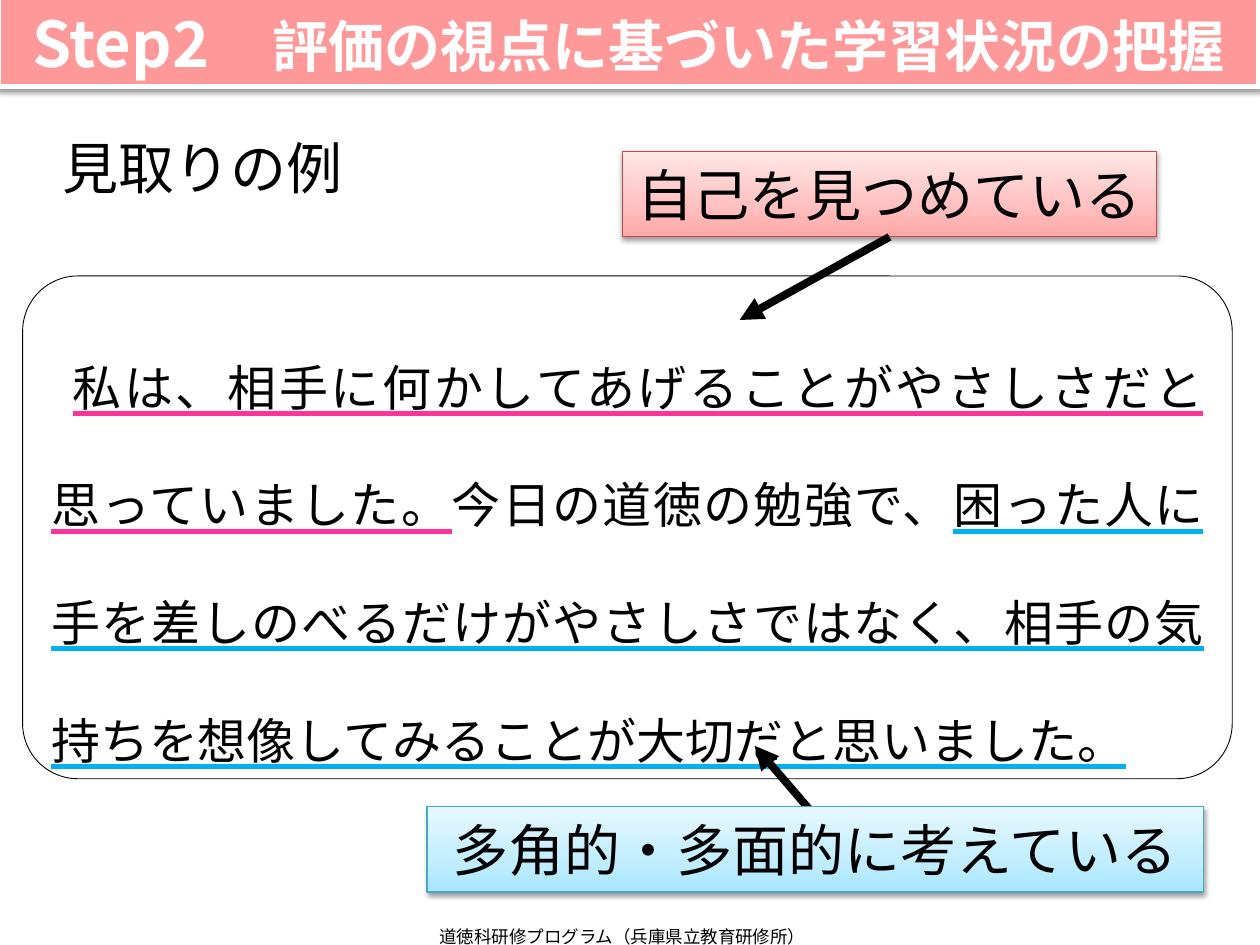
from copy import deepcopy

from pptx import Presentation
from pptx.dml.color import RGBColor
from pptx.enum.shapes import MSO_CONNECTOR, MSO_SHAPE as SHAPE
from pptx.enum.text import (MSO_ANCHOR as ANCHOR, MSO_AUTO_SIZE as AUTO,
                            MSO_TEXT_UNDERLINE_TYPE as UNDERLINE, PP_ALIGN as ALIGN)
from pptx.oxml import parse_xml
from pptx.oxml.ns import nsdecls, qn
from pptx.util import Inches, Pt

FONT = "Noto Sans CJK JP"
BLACK, WHITE = "000000", "FFFFFF"
PINK, BLUE = "FF3399", "00B0F0"


def rgb(value):
    return RGBColor.from_string(value)


def element(tag, body="", attributes=""):
    return parse_xml(f'<a:{tag} {nsdecls("a")} {attributes}>{body}</a:{tag}>')


class Slide:
    """Holds the style and the current slide; lengths are in inches."""

    def __init__(self, deck):
        self.slide = deck.slides.add_slide(deck.slide_layouts[5])
        self.shapes = self.slide.shapes

    def style_run(self, run, size, color=BLACK, bold=False, underline=None):
        font = run.font
        font.size, font.bold, font.name = Pt(size), bold, FONT
        font.color.rgb = rgb(color)
        latin = font._element.find(qn("a:latin"))
        latin.addnext(element("ea", attributes=f'typeface="{FONT}"'))
        if underline:
            font.underline = UNDERLINE.HEAVY_LINE
            latin.addprevious(element(
                "uFill", f'<a:solidFill><a:srgbClr val="{underline}"/></a:solidFill>'))

    def set_text(self, shape, runs, align=ALIGN.CENTER, anchor=ANCHOR.MIDDLE):
        """Fill a shape with one paragraph of (text, style) runs and return it."""
        frame = shape.text_frame
        frame.word_wrap, frame.auto_size = True, AUTO.NONE
        frame.vertical_anchor = anchor
        paragraph = frame.paragraphs[0]
        paragraph.alignment = align
        for text, style in runs:
            run = paragraph.add_run()
            run.text = text
            self.style_run(run, **style)
        return paragraph

    def outline(self, shape, color, width):
        shape.line.color.rgb = rgb(color)
        shape.line.width = Pt(width)
        shape.shadow.inherit = False

    def drop_shadow(self, shape):
        effects = shape._element.spPr.find(qn("a:effectLst"))
        effects.append(element(
            "outerShdw",
            '<a:srgbClr val="000000"><a:alpha val="38000"/></a:srgbClr>',
            f'blurRad="{Pt(3.1)}" dist="{Pt(1.6)}" dir="5400000" rotWithShape="0"'))

    def banner(self, box, runs, fill):
        title = self.shapes.title
        title.left, title.top, title.width, title.height = map(Inches, box)
        title.fill.solid()
        title.fill.fore_color.rgb = rgb(fill)
        self.outline(title, WHITE, 3)
        self.drop_shadow(title)
        self.set_text(title, runs)

    def label(self, box, text, size, align=ALIGN.CENTER, anchor=ANCHOR.MIDDLE):
        shape = self.shapes.add_textbox(*map(Inches, box))
        self.set_text(shape, [(text, dict(size=size))], align, anchor)

    def callout(self, box, text, colors, border):
        """Add a shadowed box whose gradient runs from bottom to top."""
        shape = self.shapes.add_shape(SHAPE.RECTANGLE, *map(Inches, box))
        shape.fill.gradient()
        shape.fill.gradient_angle = 90
        first = shape.fill.gradient_stops[0]._gs
        first.addnext(deepcopy(first))
        for stop, position, color in zip(shape.fill.gradient_stops, (0, 0.35, 1), colors):
            stop.position = position
            stop.color.rgb = rgb(color)
        self.outline(shape, border, 0.75)
        self.drop_shadow(shape)
        self.set_text(shape, [(text, dict(size=32))])

    def essay(self, box, runs):
        shape = self.shapes.add_shape(SHAPE.ROUNDED_RECTANGLE, *map(Inches, box))
        shape.adjustments[0] = 0.11
        shape.fill.solid()
        shape.fill.fore_color.rgb = rgb(WHITE)
        self.outline(shape, BLACK, 0.5)
        paragraph = self.set_text(shape, runs, ALIGN.JUSTIFY, ANCHOR.TOP)
        paragraph.line_spacing = 2.0
        paragraph._p.get_or_add_pPr().set("indent", str(Inches(0.17)))

    def arrow(self, start, end):
        line = self.shapes.add_connector(
            MSO_CONNECTOR.STRAIGHT, *map(Inches, (*start, *end)))
        line.line.color.rgb = rgb(BLACK)
        line.line.width = Pt(4.5)
        line.line._get_or_add_ln().append(element("tailEnd", attributes='type="triangle"'))
        line._element.spPr.append(element("effectLst"))


def main():
    deck = Presentation()
    deck.slide_width, deck.slide_height = Inches(10), Inches(7.5)
    slide = Slide(deck)

    heading = dict(color=WHITE, bold=True)
    slide.banner((-0.01, -0.02, 10, 0.71),
                 [("Step2　", dict(size=36, **heading)),
                  ("評価の視点に基づいた学習状況の把握", dict(size=32, **heading))],
                 "FF9999")
    slide.label((-0.37, 0.92, 3.96, 0.81), "見取りの例", 32)
    slide.callout((4.94, 1.2, 4.24, 0.68), "自己を見つめている",
                  ("FFA6A5", "FFC0BF", "FFE7E7"), "BF4C48")
    slide.essay((0.18, 2.19, 9.6, 3.99), [
        ("私は、相手に何かしてあげることがやさしさだと思っていました。",
         dict(size=28, underline=PINK)),
        ("今日の道徳の勉強で、", dict(size=28)),
        ("困った人に手を差しのべるだけがやさしさではなく、"
         "相手の気持ちを想像してみることが大切だと思いました。",
         dict(size=28, underline=BLUE)),
    ])
    slide.arrow((7.06, 1.88), (5.87, 2.54))
    slide.arrow((6.61, 6.64), (5.99, 5.92))
    slide.callout((3.39, 6.4, 6.16, 0.68), "多角的・多面的に考えている",
                  ("A7E6FF", "C1EDFF", "E7F8FF"), "46AAC5")
    slide.label((3.39, 7.3, 3.21, 0.4), "道徳科研修プログラム（兵庫県立教育研修所）", 10,
                ALIGN.LEFT, ANCHOR.TOP)
    deck.save("out.pptx")


if __name__ == "__main__":
    main()
